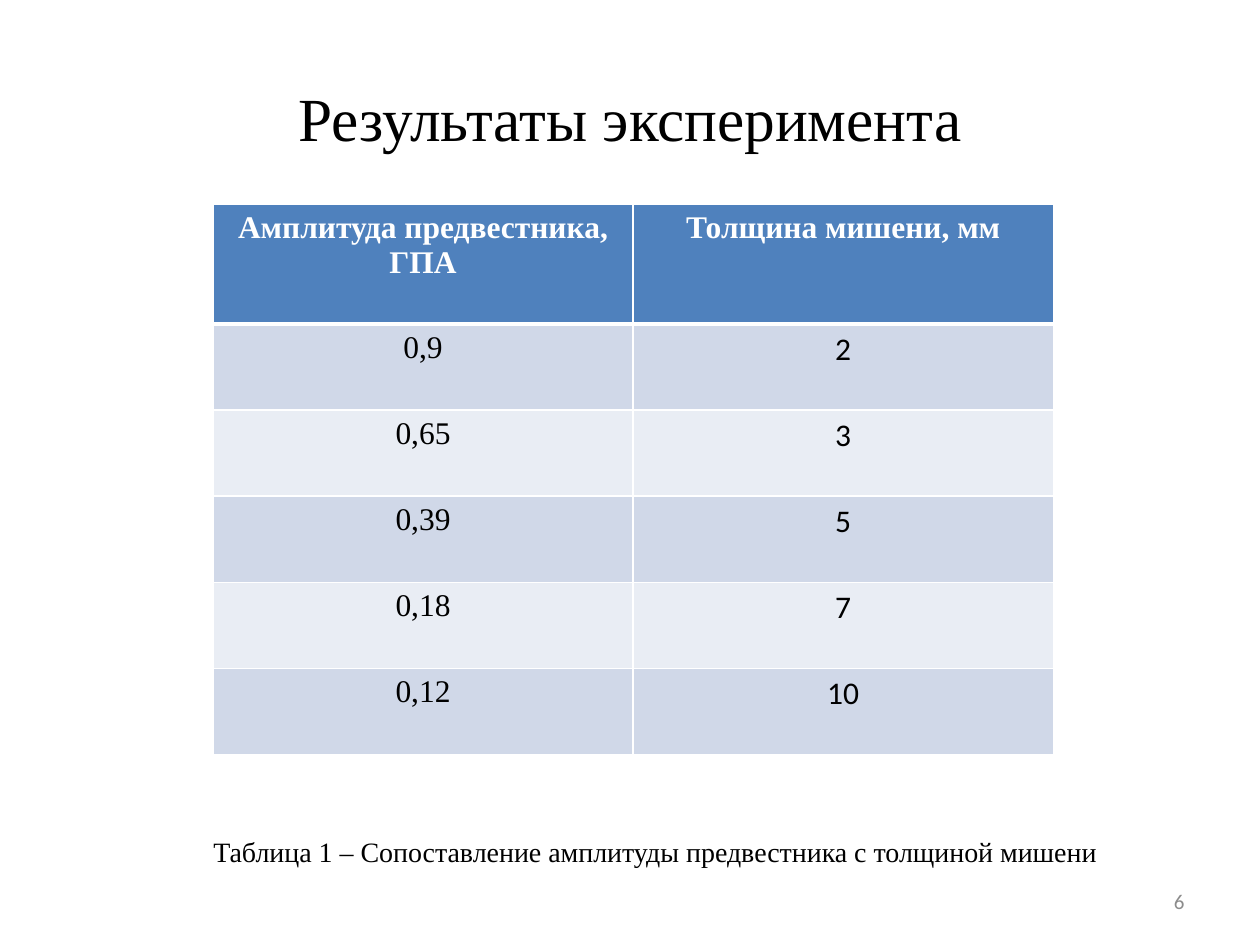
from lxml.etree import SubElement
from pptx import Presentation
from pptx.dml.color import RGBColor
from pptx.enum.text import MSO_ANCHOR, PP_ALIGN
from pptx.oxml.ns import qn
from pptx.util import Inches, Pt

BLACK = RGBColor(0x00, 0x00, 0x00)
WHITE = RGBColor(0xFF, 0xFF, 0xFF)
GREY = RGBColor(0x8C, 0x8C, 0x8C)
HEADER = RGBColor(0x4F, 0x81, 0xBD)
BANDS = (RGBColor(0xE9, 0xED, 0xF4), RGBColor(0xD0, 0xD8, 0xE8))
SERIF, SANS = "Times New Roman", "Calibri"

ROWS = [
    ("Амплитуда предвестника, ГПА", "Толщина мишени, мм"),
    ("0,9", "2"),
    ("0,65", "3"),
    ("0,39", "5"),
    ("0,18", "7"),
    ("0,12", "10"),
]


def write(tf, text, size, font, color, align=PP_ALIGN.CENTER, bold=False):
    p = tf.paragraphs[0]
    p.alignment = align
    r = p.add_run()
    r.text = text
    r.font.size = Pt(size)
    r.font.name = font
    r.font.bold = bold
    r.font.color.rgb = color


def add_text(s, box, text, size, font, color, align=PP_ALIGN.CENTER):
    tf = s.shapes.add_textbox(*map(Inches, box)).text_frame
    tf.word_wrap = True
    tf.vertical_anchor = MSO_ANCHOR.MIDDLE
    write(tf, text, size, font, color, align)


def set_borders(cell, bottom):
    tcPr = cell._tc.get_or_add_tcPr()
    for side, width in (("L", 1), ("R", 1), ("T", 1), ("B", bottom)):
        ln = SubElement(tcPr, qn(f"a:ln{side}"), w=str(Pt(width)))
        fill = SubElement(ln, qn("a:solidFill"))
        SubElement(fill, qn("a:srgbClr"), val=str(WHITE))


def add_results(s, box, header_height):
    left, top, width, height = box
    table = s.shapes.add_table(len(ROWS), 2, *map(Inches, box)).table
    for col in table.columns:
        col.width = Inches(width / 2)
    row_height = (height - header_height) / (len(ROWS) - 1)
    for i, values in enumerate(ROWS):
        is_header = i == 0
        table.rows[i].height = Inches(header_height if is_header else row_height)
        for j, value in enumerate(values):
            cell = table.cell(i, j)
            # Borders come before the fill in the cell properties
            set_borders(cell, 3 if is_header else 1)
            cell.fill.solid()
            cell.fill.fore_color.rgb = HEADER if is_header else BANDS[i % 2]
            write(cell.text_frame, value, 18,
                  SERIF if is_header or j == 0 else SANS,
                  WHITE if is_header else BLACK, bold=is_header)


def main():
    prs = Presentation()
    prs.slide_width, prs.slide_height = Inches(10), Inches(7.5)
    s = prs.slides.add_slide(prs.slide_layouts[6])

    # Title
    add_text(s, (0.5, 0.3, 9, 1.25), "Результаты эксперимента", 35, SERIF, BLACK)
    # Slide number
    add_text(s, (7.17, 6.95, 2.33, 0.4), "6", 12, SANS, GREY, PP_ALIGN.RIGHT)
    # Table of results and its caption
    add_results(s, (1.69, 1.62, 6.67, 4.37), 0.95)
    add_text(s, (1.54, 6.57, 7.32, 0.37),
             "Таблица 1 – Сопоставление амплитуды предвестника с толщиной мишени",
             16, SERIF, BLACK)

    prs.save("out.pptx")


if __name__ == "__main__":
    main()
